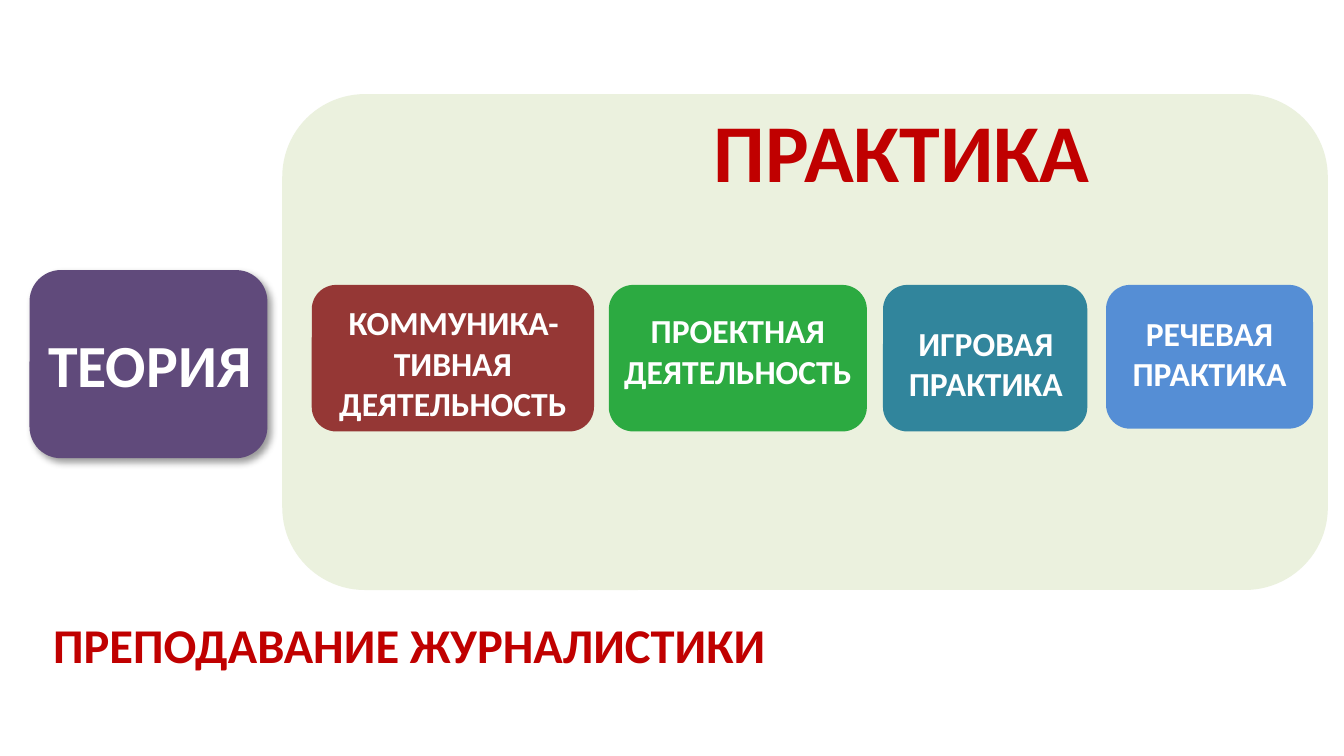
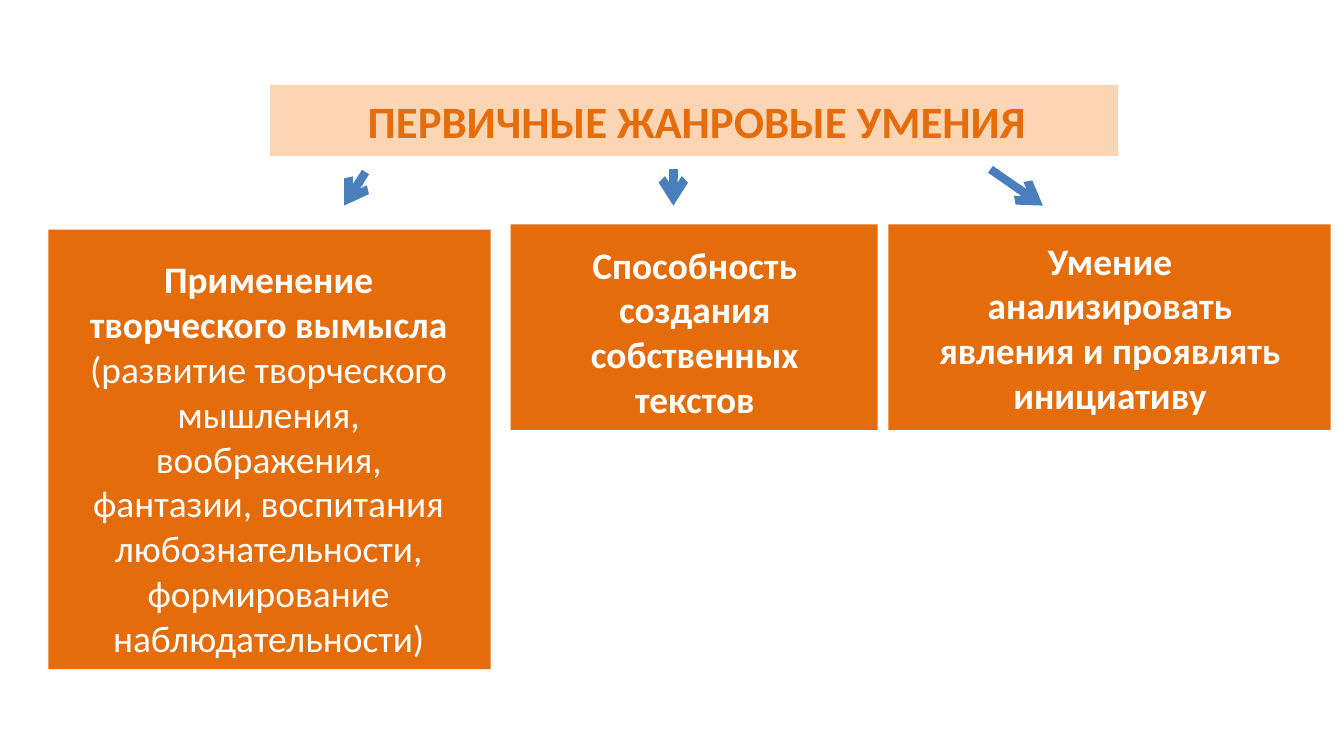
from dataclasses import dataclass

import lxml.etree
import pptx
import pptx.dml.color
import pptx.enum.shapes
import pptx.enum.text
import pptx.oxml
import pptx.oxml.ns
import pptx.shapes.autoshape
import pptx.slide
import pptx.util

Inches = pptx.util.Inches
Box = tuple[float, float, float, float]
Point = tuple[float, float]
KIND = pptx.enum.shapes.MSO_SHAPE
ROUND, RECT = KIND.ROUNDED_RECTANGLE, KIND.RECTANGLE

WIDTH = 10
HEIGHT = WIDTH * 9 / 16
FONT = "Calibri"
WHITE, RED, ORANGE, PEACH, BLUE = "FFFFFF", "C00000", "E46C0A", "FCD5B5", "4B7EBC"
TOP, HIGH = 2.12, 1.09
LINE_TOP, LINE_END = 1.26, 1.53


@dataclass(frozen=True)
class Label:
    box: Box
    text: str
    size: int
    color: str = WHITE
    plain: str = ""


@dataclass(frozen=True)
class Card:
    box: Box
    fill: str
    label: Label


THEORY = Card((0.22, 2.01, 1.77, 1.4), "604A7B", Label((0.24, 2.39, 1.75, 0.64), "ТЕОРИЯ", 32))
FIELD = Card((2.1, 0.7, 7.78, 3.69), "EBF1DE", Label((4.62, 0.7, 4.18, 0.84), "ПРАКТИКА", 44, RED))
TOPIC = Label((0.22, 4.53, 5.66, 0.54), "ПРЕПОДАВАНИЕ ЖУРНАЛИСТИКИ", 26, RED)
FORMS = [
    Card((2.32, TOP, 2.1, HIGH), "953735",
         Label((2.32, 2.2, 2.1, 1.01), "КОММУНИКА-ТИВНАЯ ДЕЯТЕЛЬНОСТЬ", 18)),
    Card((4.53, TOP, 1.92, HIGH), "2CAA41",
         Label((4.53, 2.26, 1.92, 0.71), "ПРОЕКТНАЯ ДЕЯТЕЛЬНОСТЬ", 18)),
    Card((6.57, TOP, 1.52, HIGH), "31859C",
         Label((6.64, 2.35, 1.39, 0.71), "ИГРОВАЯ\nПРАКТИКА", 18)),
    Card((8.23, TOP, 1.54, 1.07), "558ED5",
         Label((8.29, 2.28, 1.42, 0.71), "РЕЧЕВАЯ ПРАКТИКА", 18)),
]
SKILLS = [
    Card((2.01, 0.63, 6.31, 0.53), PEACH,
         Label((2.22, 0.65, 5.93, 0.5), "ПЕРВИЧНЫЕ ЖАНРОВЫЕ УМЕНИЯ", 24, ORANGE)),
    Card((0.36, 1.71, 3.29, 3.27), ORANGE,
         Label((0.5, 1.86, 3, 3.13), "Применение творческого вымысла ", 20,
               plain="(развитие творческого мышления, воображения, фантазии, "
                     "воспитания любознательности, формирование наблюдательности)")),
    Card((3.8, 1.67, 2.73, 1.53), ORANGE,
         Label((3.95, 1.75, 2.44, 1.45), "Способность создания собственных текстов", 20)),
    Card((6.61, 1.67, 3.29, 1.53), ORANGE,
         Label((6.76, 1.72, 3, 1.45), "Умение анализировать явления и проявлять инициативу", 20)),
]
ARROWS: list[tuple[Point, Point]] = [
    ((2.72, 1.28), (2.56, LINE_END)),
    ((5.01, LINE_TOP), (5.01, LINE_END)),
    ((7.37, LINE_TOP), (7.76, LINE_END)),
]


def paint(code: str) -> pptx.dml.color.RGBColor:
    return pptx.dml.color.RGBColor.from_string(code)


def add_label(slide: pptx.slide.Slide, label: Label) -> None:
    frame = slide.shapes.add_textbox(*map(Inches, label.box)).text_frame
    frame.word_wrap = True
    frame.auto_size = pptx.enum.text.MSO_AUTO_SIZE.SHAPE_TO_FIT_TEXT
    frame.text = label.text
    for para in frame.paragraphs:
        para.alignment = pptx.enum.text.PP_ALIGN.CENTER
        para.font.name = FONT
        para.font.size = pptx.util.Pt(label.size)
        para.font.color.rgb = paint(label.color)
        para.font.bold = True
    if label.plain:
        run = frame.paragraphs[-1].add_run()
        run.text = label.plain
        run.font.bold = False


def add_card(slide: pptx.slide.Slide, card: Card,
             kind: KIND) -> pptx.shapes.autoshape.Shape:
    shape = slide.shapes.add_shape(kind, *map(Inches, card.box))
    shape.shadow.inherit = False
    shape.fill.solid()
    shape.fill.fore_color.rgb = paint(card.fill)
    shape.line.fill.background()
    add_label(slide, card.label)
    return shape


def add_shade(shape: pptx.shapes.autoshape.Shape) -> None:
    effects = shape._element.spPr.find(pptx.oxml.ns.qn("a:effectLst"))
    effects.append(pptx.oxml.parse_xml(
        f'<a:outerShdw {pptx.oxml.ns.nsdecls("a")} blurRad="{pptx.util.Pt(4)}" '
        f'dist="{pptx.util.Pt(3)}" dir="2700000" algn="tl" rotWithShape="0">'
        '<a:srgbClr val="000000"><a:alpha val="40000"/></a:srgbClr></a:outerShdw>'))


def add_arrow(slide: pptx.slide.Slide, start: Point, end: Point) -> None:
    line = slide.shapes.add_connector(
        pptx.enum.shapes.MSO_CONNECTOR.STRAIGHT, *map(Inches, start + end))
    line.line.color.rgb = paint(BLUE)
    line.line.width = pptx.util.Pt(4.5)
    name = pptx.oxml.ns.qn
    lxml.etree.SubElement(line.line._get_or_add_ln(), name("a:tailEnd"), type="arrow")
    lxml.etree.SubElement(line._element.spPr, name("a:effectLst"))


def draw_course(slide: pptx.slide.Slide) -> None:
    add_card(slide, FIELD, ROUND)
    add_shade(add_card(slide, THEORY, ROUND))
    for form in FORMS:
        add_card(slide, form, ROUND)
    add_label(slide, TOPIC)


def draw_skills(slide: pptx.slide.Slide) -> None:
    for skill in SKILLS:
        add_card(slide, skill, RECT)
    for start, end in ARROWS:
        add_arrow(slide, start, end)


def main() -> None:
    deck = pptx.Presentation()
    deck.slide_width, deck.slide_height = Inches(WIDTH), Inches(HEIGHT)
    for draw in (draw_course, draw_skills):
        draw(deck.slides.add_slide(deck.slide_layouts[6]))
    deck.save("out.pptx")


if __name__ == "__main__":
    main()
